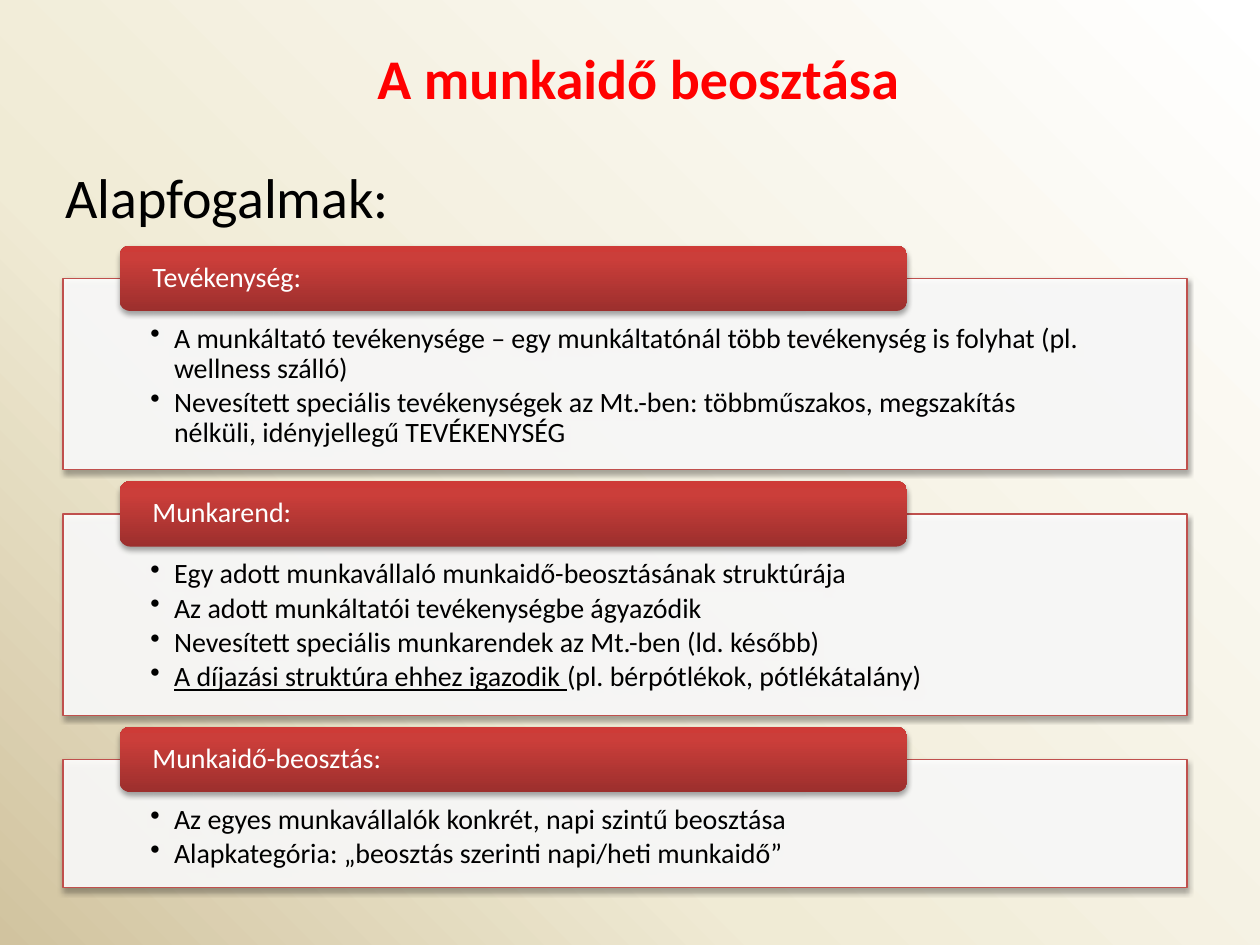
"""Build the slide on basic concepts of working time scheduling."""
from lxml import etree
from pptx import Presentation
from pptx import util as u
from pptx.dml.color import RGBColor
from pptx.enum import shapes, text
from pptx.oxml import ns

TITLE = "A munkaidő beosztása "
HEADING = "Alapfogalmak:"
SECTIONS = [
    ("Tevékenység:", 3.86, [
        [("A munkáltató tevékenysége – egy munkáltatónál több tevékenység is folyhat (pl. wellness szálló)", False)],
        [("Nevesített speciális tevékenységek az Mt.-ben: többműszakos, megszakítás nélküli, "
          "idényjellegű TEVÉKENYSÉG", False)],
    ]),
    ("Munkarend:", 4.06, [
        [("Egy adott munkavállaló munkaidő-beosztásának struktúrája", False)],
        [("Az adott munkáltatói tevékenységbe ágyazódik", False)],
        [("Nevesített speciális munkarendek az Mt.-ben (ld. később)", False)],
        [("A díjazási struktúra ehhez igazodik ", True), ("(pl. bérpótlékok, pótlékátalány)", False)],
    ]),
    ("Munkaidő-beosztás:", 2.59, [
        [("Az egyes munkavállalók konkrét, napi szintű beosztása", False)],
        [("Alapkategória: „beosztás szerinti napi/heti munkaidő”", False)],
    ]),
]
COLORS = {"red": "FF0000", "black": "000000", "white": "FFFFFF", "border": "C0504D"}
PAGE_STOPS = [(0, "FFFFFF"), (65, "F0EBD5"), (100, "D1C39F")]
TAB_STOPS = [(0, "9C2F2D"), (80, "CB3E3A"), (100, "CE3B37")]
FIRST_TOP, GAP = 5.61, 0.89
PANEL_LEFT, PANEL_W = 1.27, 22.66
TAB_LEFT, TAB_W, TAB_H = 2.41, 15.88, 1.32


def add(parent, tag, **attrs):
    child = etree.SubElement(parent, ns.qn(tag))
    for name, value in attrs.items():
        child.set(name, str(value))
    return child


def set_gradient(fill, root, stops, angle):
    fill.gradient()
    grad = next(root.iter(ns.qn("a:gradFill")))
    for child in list(grad):
        grad.remove(child)
    gs_list = add(grad, "a:gsLst")
    for pos, color in stops:
        add(add(gs_list, "a:gs", pos=pos * 1000), "a:srgbClr", val=color)
    add(grad, "a:lin", ang=angle * 60000, scaled=0)


def add_shadow(sp):
    sp.shadow.inherit = False
    effects = sp._element.spPr.find(ns.qn("a:effectLst"))
    shadow = add(effects, "a:outerShdw", blurRad=u.Pt(3.1), dist=u.Pt(1.8), dir=5400000, rotWithShape=0)
    add(add(shadow, "a:srgbClr", val=COLORS["black"]), "a:alpha", val=35000)


def set_frame(tf, anchor, insets):
    tf.word_wrap = True
    tf.vertical_anchor = anchor
    tf.margin_left, tf.margin_top, tf.margin_right, tf.margin_bottom = map(u.Cm, insets)


def set_font(p, size, color, bold=False):
    p.font.name, p.font.size, p.font.bold = "Calibri", u.Pt(size), bold
    p.font.color.rgb = RGBColor.from_string(COLORS[color])


def add_label(s, box, label, color, bold, align, anchor):
    tf = s.shapes.add_textbox(*map(u.Cm, box)).text_frame
    set_frame(tf, anchor, (0.25, 0.13, 0.25, 0.13))
    p = tf.paragraphs[0]
    p.text, p.alignment = label, align
    set_font(p, 32, color, bold)


def add_panel(s, top, height, bullets):
    sp = s.shapes.add_shape(shapes.MSO_SHAPE.RECTANGLE, *map(u.Cm, (PANEL_LEFT, top, PANEL_W, height)))
    sp.fill.solid()
    sp.fill.fore_color.rgb = RGBColor.from_string(COLORS["white"])
    add(next(sp._element.spPr.iter(ns.qn("a:srgbClr"))), "a:alpha", val=90000)
    sp.line.color.rgb = RGBColor.from_string(COLORS["border"])
    sp.line.width = u.Pt(0.75)
    add_shadow(sp)
    tf = sp.text_frame
    set_frame(tf, text.MSO_ANCHOR.TOP, (1.76, 0.92, 1.76, 0.3))
    for i, runs in enumerate(bullets):
        p = tf.add_paragraph() if i else tf.paragraphs[0]
        p.alignment, p.line_spacing, p.space_after = text.PP_ALIGN.LEFT, 0.9, u.Pt(2.4)
        pPr = p._p.get_or_add_pPr()
        pPr.set("marL", str(u.Cm(0.48)))
        pPr.set("indent", str(-u.Cm(0.48)))
        add(pPr, "a:buChar", char="•")
        set_font(p, 16, "black")
        for words, underlined in runs:
            r = p.add_run()
            r.text = words
            if underlined:
                r.font.underline = True


def add_tab(s, top, label):
    sp = s.shapes.add_shape(shapes.MSO_SHAPE.ROUNDED_RECTANGLE, *map(u.Cm, (TAB_LEFT, top, TAB_W, TAB_H)))
    set_gradient(sp.fill, sp._element, TAB_STOPS, 270)
    sp.line.fill.background()
    add_shadow(sp)
    set_frame(sp.text_frame, text.MSO_ANCHOR.MIDDLE, (0.6, 0, 0.6, 0))
    p = sp.text_frame.paragraphs[0]
    p.text, p.alignment, p.line_spacing = label, text.PP_ALIGN.LEFT, 0.9
    set_font(p, 16, "white")


def main():
    prs = Presentation()
    prs.slide_width, prs.slide_height = u.Cm(25.4), u.Cm(19.05)
    s = prs.slides.add_slide(prs.slide_layouts[6])
    set_gradient(s.background.fill, s._element, PAGE_STOPS, 135)
    top = FIRST_TOP
    for label, height, bullets in SECTIONS:
        add_panel(s, top, height, bullets)
        add_tab(s, top - TAB_H / 2, label)
        top += height + GAP
    add_label(s, (0.3, 0.74, 25.4, 1.63), TITLE, "red", True, text.PP_ALIGN.CENTER, text.MSO_ANCHOR.TOP)
    add_label(s, (1.07, 2.36, 22.86, 3.18), HEADING, "black", False, text.PP_ALIGN.LEFT, text.MSO_ANCHOR.MIDDLE)
    prs.save("out.pptx")


if __name__ == "__main__":
    main()
